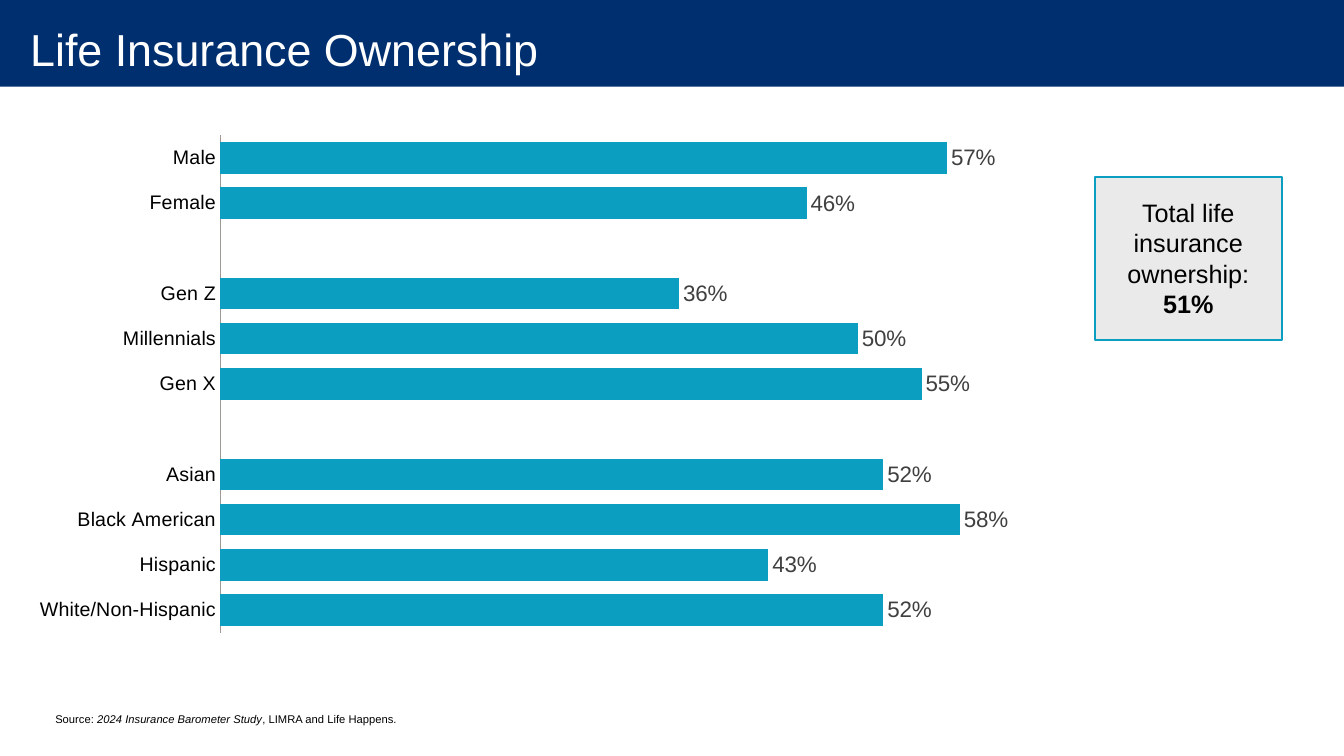
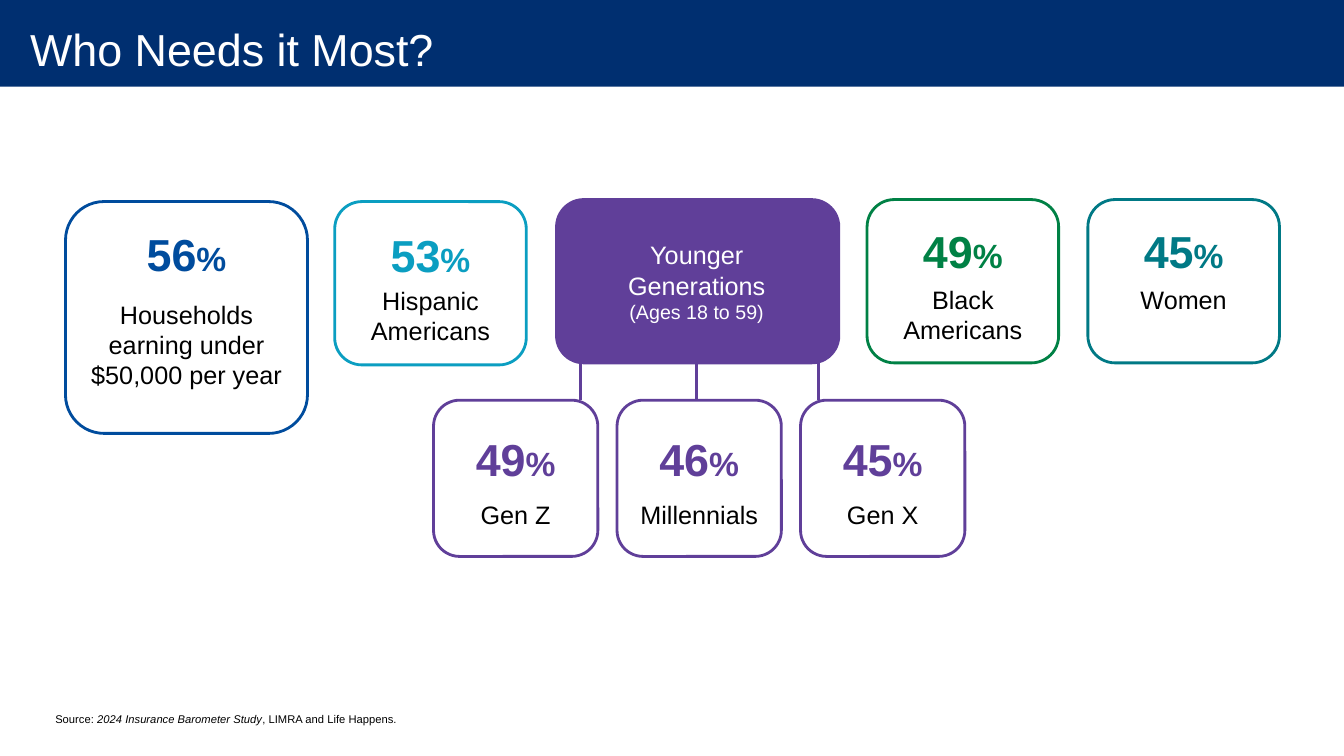
from lxml import etree
from pptx import Presentation
from pptx.chart.data import CategoryChartData
from pptx.dml.color import RGBColor
from pptx.enum.chart import XL_CHART_TYPE as ChartType
from pptx.enum.chart import XL_LABEL_POSITION as LabelPosition
from pptx.enum.chart import XL_TICK_MARK as TickMark
from pptx.enum.shapes import MSO_CONNECTOR as Connector
from pptx.enum.shapes import MSO_SHAPE as Shape
from pptx.enum.text import MSO_ANCHOR as Anchor
from pptx.enum.text import PP_ALIGN as Align
from pptx.oxml import parse_xml
from pptx.oxml.ns import nsdecls, qn
from pptx.util import Inches, Pt

FONT = "Arial"
COLORS = {
    "navy": "002F70", "blue": "004C9D", "cyan": "0B9EC1", "green": "008145",
    "teal": "007985", "purple": "603F99", "gray": "EBEAEA", "axis": "9D9795",
    "label": "404040", "black": "000000", "white": "FFFFFF",
}

# Content: a run is (text, size, colour, style), style being "", "b" or "i"
SOURCE = [
    ("Source: ", 8, "black", ""),
    ("2024 Insurance Barometer Study", 8, "black", "i"),
    (", LIMRA and Life Happens.", 8, "black", ""),
]
OWNERSHIP = [  # top to bottom; empty rows separate the groups
    ("Male", 0.57), ("Female", 0.46), ("", None),
    ("Gen Z", 0.36), ("Millennials", 0.50), ("Gen X", 0.55), ("", None),
    ("Asian", 0.52), ("Black American", 0.58), ("Hispanic", 0.43),
    ("White/Non-Hispanic", 0.52),
]
TOTAL = [
    ("Total life insurance ownership: ", 18, "black", ""),
    ("51%", 18, "black", "b"),
]
YOUNGER = [
    [("Younger", 18, "white", "")],
    [("Generations", 18, "white", "")],
    [("(Ages 18 to 59)", 14, "white", "")],
]
# number, label, colour, (left, top, width, height), number and label offsets
GROUP_CARDS = [
    ("56", "Households earning under $50,000 per year", "blue",
     (0.65, 2, 2.4, 2.3), 0.2, 0.92),
    ("53", "Hispanic Americans", "cyan", (3.32, 2, 1.9, 1.62), 0.21, 0.78),
    ("49", "Black Americans", "green", (8.6, 1.98, 1.9, 1.62), 0.19, 0.79),
    ("45", "Women", "teal", (10.79, 1.98, 1.9, 1.62), 0.19, 0.79),
]
GENERATIONS = [("49", "Gen Z"), ("46", "Millennials"), ("45", "Gen X")]
CONNECTOR_XS = [5.76, 6.91, 8.12]
LABEL_MAX_WIDTH = 2.14


def rgb(name):
    return RGBColor.from_string(COLORS[name])


def add_box(slide, kind, place, fill=None, line=None, line_width=2):
    shape = slide.shapes.add_shape(kind, *map(Inches, place))
    shape.shadow.inherit = False
    if fill:
        shape.fill.solid()
        shape.fill.fore_color.rgb = rgb(fill)
    else:
        shape.fill.background()
    if line:
        shape.line.color.rgb = rgb(line)
        shape.line.width = Pt(line_width)
    else:
        shape.line.fill.background()
    return shape


def add_text(slide, place, paragraphs, align=Align.CENTER):
    box = slide.shapes.add_textbox(*map(Inches, place))
    frame = box.text_frame
    frame.word_wrap = True
    for index, runs in enumerate(paragraphs):
        paragraph = frame.add_paragraph() if index else frame.paragraphs[0]
        paragraph.alignment = align
        for text, size, color, style in runs:
            run = paragraph.add_run()
            run.text = text
            style_font(run.font, size, color)
            run.font.bold = style == "b"
            run.font.italic = style == "i"
    return frame


def style_font(font, size, color):
    font.name = FONT
    font.size = Pt(size)
    font.color.rgb = rgb(color)


def add_slide(presentation, title):
    """Blank slide with the shared title band and source line."""
    slide = presentation.slides.add_slide(presentation.slide_layouts[6])
    add_box(slide, Shape.RECTANGLE, (0, 0, 13.33, 0.86), fill="navy")
    frame = add_text(slide, (0, 0, 13.33, 0.97),
                     [[(title, 32, "white", "")]], Align.LEFT)
    frame.vertical_anchor = Anchor.MIDDLE
    frame.margin_left, frame.margin_right = Inches(0.3), Inches(0.2)
    frame.margin_top = frame.margin_bottom = 0
    add_text(slide, (0.45, 7.02, 7.44, 0.24), [SOURCE], Align.LEFT)
    return slide


def add_ownership_chart(slide):
    data = CategoryChartData(number_format="0%")
    rows = OWNERSHIP[::-1]  # bar charts run from the bottom up
    data.categories = [name for name, _ in rows]
    data.add_series("Series 1", [value for _, value in rows])
    place = map(Inches, (0.19, 1.24, 11.07, 5.14))
    chart = slide.shapes.add_chart(ChartType.BAR_CLUSTERED, *place, data).chart
    chart.has_legend = chart.has_title = False
    style_font(chart.font, 10, "black")

    axis = chart.category_axis
    axis.major_tick_mark = axis.minor_tick_mark = TickMark.NONE
    axis.format.line.color.rgb = rgb("axis")
    axis.format.line.width = Pt(0.75)
    style_font(axis.tick_labels.font, 14, "black")
    values = chart.value_axis
    values.minimum_scale, values.maximum_scale = 0, 0.7
    values.has_major_gridlines = False
    values.visible = False

    plot = chart.plots[0]
    plot.gap_width = 44
    plot.vary_by_categories = False
    fill = plot.series[0].format.fill
    fill.solid()
    fill.fore_color.rgb = rgb("cyan")
    plot.has_data_labels = True
    labels = plot.data_labels
    labels.show_value = True
    labels.number_format, labels.number_format_is_linked = "0%", False
    labels.position = LabelPosition.OUTSIDE_END
    style_font(labels.font, 16, "label")

    # Fixed inner plot area, as fractions of the chart
    parts = "".join(f'<c:{tag} val="{value}"/>' for tag, value in [
        ("layoutTarget", "inner"), ("xMode", "edge"), ("yMode", "edge"),
        ("x", 0.18), ("y", 0.02), ("w", 0.8), ("h", 0.96)])
    area = chart.element.find(".//" + qn("c:plotArea"))
    for old in area.findall(qn("c:layout")):
        area.remove(old)
    area.insert(0, parse_xml(f'<c:layout {nsdecls("c")}><c:manualLayout>'
                             f'{parts}</c:manualLayout></c:layout>'))


def add_connector(slide, x, top, bottom):
    line = slide.shapes.add_connector(
        Connector.STRAIGHT, *map(Inches, (x, top, x, bottom)))
    line.line.color.rgb = rgb("purple")
    line.line.width = Pt(2.25)
    etree.SubElement(line.element.spPr, qn("a:effectLst"))


def add_card(slide, number, label, color, place, number_dy, label_dy):
    left, top, width, height = place
    add_box(slide, Shape.ROUNDED_RECTANGLE, place, line=color)
    add_text(slide, (left, top + number_dy, width, 0.64),
             [[(number, 32, color, "b"), ("%", 24, color, "b")]])
    label_width = min(width, LABEL_MAX_WIDTH)
    label_left = left + (width - label_width) / 2
    add_text(slide, (label_left, top + label_dy, label_width, 0.4),
             [[(label, 18, "black", "")]])


def build_ownership(presentation):
    slide = add_slide(presentation, "Life Insurance Ownership")
    add_ownership_chart(slide)
    add_box(slide, Shape.RECTANGLE, (10.86, 1.76, 1.86, 1.61),
            "gray", "cyan", 1.5)
    add_text(slide, (10.89, 1.91, 1.79, 1.31), [TOTAL])


def build_needs(presentation):
    slide = add_slide(presentation, "Who Needs it Most?")
    for x in CONNECTOR_XS:
        add_connector(slide, x, 3.29, 3.97)
    for card in GROUP_CARDS:
        add_card(slide, *card)
    # Younger generations and their three cards
    add_box(slide, Shape.ROUNDED_RECTANGLE, (5.52, 1.98, 2.8, 1.62),
            "purple", "purple")
    add_text(slide, (5.6, 2.33, 2.62, 0.94), YOUNGER)
    for index, (number, label) in enumerate(GENERATIONS):
        place = (4.3 + 1.82 * index, 3.97, 1.63, 1.55)
        add_card(slide, number, label, "purple", place, 0.26, 0.93)


def main():
    presentation = Presentation()
    presentation.slide_width = Inches(13.33)
    presentation.slide_height = Inches(7.5)
    build_ownership(presentation)
    build_needs(presentation)
    presentation.save("out.pptx")


if __name__ == "__main__":
    main()
